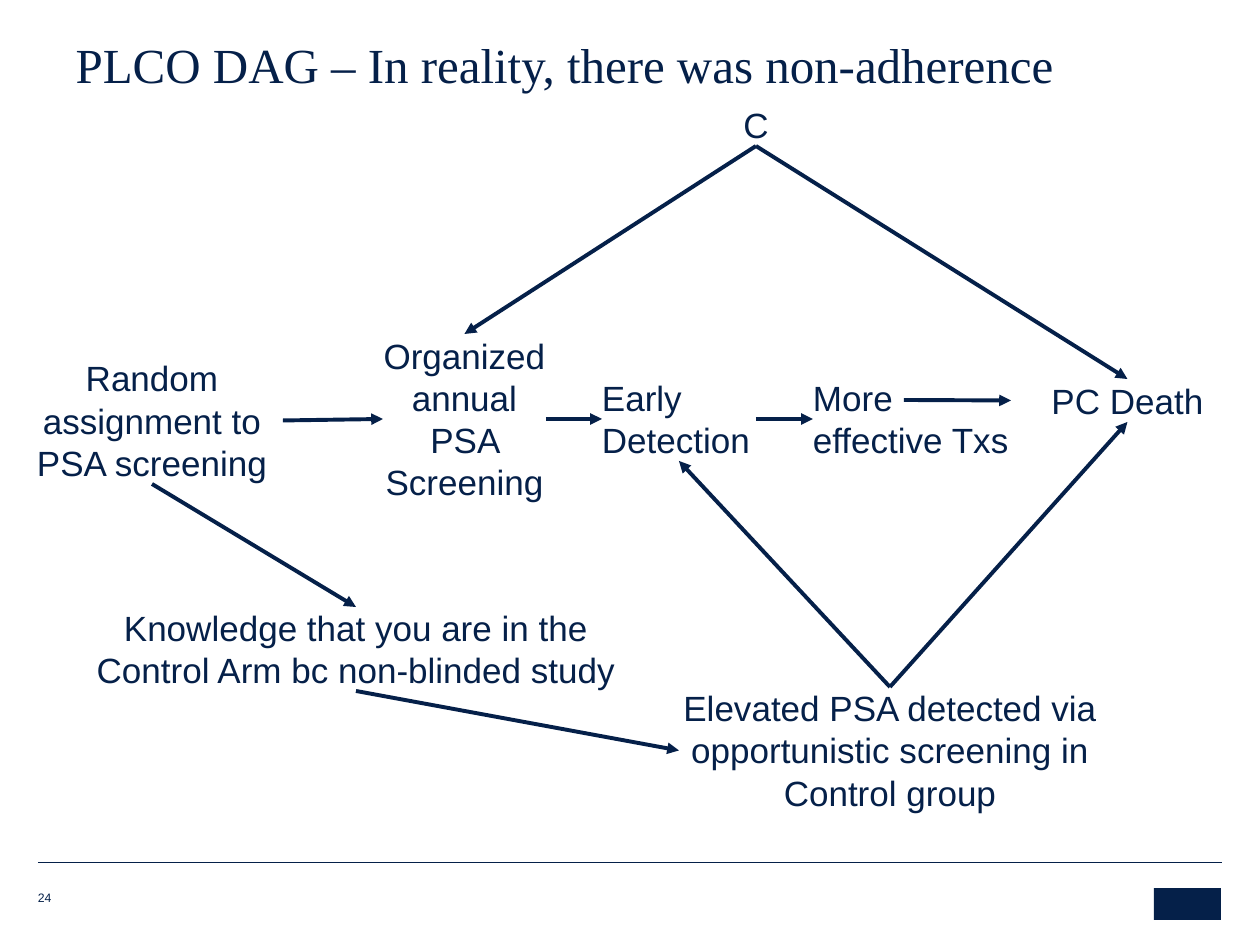
from lxml.etree import SubElement
from pptx import Presentation
from pptx.dml.color import RGBColor
from pptx.enum.shapes import MSO_CONNECTOR, MSO_SHAPE
from pptx.enum.text import MSO_ANCHOR, MSO_AUTO_SIZE, PP_ALIGN
from pptx.oxml.ns import qn
from pptx.util import Emu, Pt

PX = 914400 // 126
HUES = {"navy": "052049"}
TOP, LEFT, BOTTOM, RIGHT = range(4)
MID, START = PP_ALIGN.CENTER, PP_ALIGN.LEFT

TITLE = "PLCO DAG – In reality, there was non-adherence"

# Nodes: name -> text, box in px, alignment
NODES = {
    "random": ("Random assignment to PSA screening", (21, 357, 262, 127), MID),
    "annual": ("Organized annual PSA Screening", (383, 334, 163, 170), MID),
    "early": ("Early Detection", (602, 377, 154, 84), START),
    "more": ("More effective Txs", (813, 377, 205, 84), START),
    "death": ("PC Death", (1011, 379, 233, 43), MID),
    "cause": ("C", (630, 103, 252, 43), MID),
    "known": ("Knowledge that you are in the Control Arm bc non-blinded study",
              (72, 607, 568, 84), MID),
    "raised": ("Elevated PSA detected via opportunistic screening in Control group",
               (679, 687, 422, 127), MID),
}

# Arrows: from node, side, to node, side
LINKS = [
    ("random", RIGHT, "annual", LEFT),
    ("annual", RIGHT, "early", LEFT),
    ("early", RIGHT, "more", LEFT),
    ("cause", BOTTOM, "annual", TOP),
    ("cause", BOTTOM, "death", TOP),
    ("random", BOTTOM, "known", TOP),
    ("known", BOTTOM, "raised", LEFT),
    ("raised", TOP, "early", BOTTOM),
    ("raised", TOP, "death", BOTTOM),
]


def px(*nums):
    return [Emu(n * PX) for n in nums]


def hue(name):
    return RGBColor.from_string(HUES[name])


def style(para, size, face="Arial", align=START):
    para.alignment = align
    para.font.size = Pt(size)
    para.font.name = face
    para.font.color.rgb = hue("navy")


def label(slide, text, box, size, align=START):
    shape = slide.shapes.add_textbox(*px(*box))
    frame = shape.text_frame
    frame.word_wrap = True
    frame.margin_left = frame.margin_right = 0
    frame.margin_top = frame.margin_bottom = 0
    frame.text = text
    style(frame.paragraphs[0], size, align=align)
    return shape


def line(slide, ends=(0, 0, 0, 0), width=2.25, head=True):
    link = slide.shapes.add_connector(MSO_CONNECTOR.STRAIGHT, *px(*ends))
    link.line.color.rgb = hue("navy")
    link.line.width = Pt(width)
    if head:
        SubElement(link.line._get_or_add_ln(), qn("a:tailEnd"), type="triangle")
    SubElement(link._element.spPr, qn("a:effectLst"))
    return link


def main():
    deck = Presentation()
    deck.slide_width, deck.slide_height = px(1260, 945)
    slide = deck.slides.add_slide(deck.slide_layouts[5])

    # Title
    title = slide.shapes.title
    title.left, title.top, title.width, title.height = px(63, 16, 1126, 84)
    frame = title.text_frame
    frame.text = TITLE
    frame.auto_size = MSO_AUTO_SIZE.NONE
    frame.vertical_anchor = MSO_ANCHOR.BOTTOM
    style(frame.paragraphs[0], 28, "Times New Roman")
    frame.paragraphs[0].line_spacing = 0.85

    # Footer: rule, page number, plain block for the logo
    line(slide, (38, 862, 1222, 862), 0.25, head=False)
    label(slide, "24", (38, 890, 34, 21), 7)
    mark = slide.shapes.add_shape(MSO_SHAPE.RECTANGLE, *px(1154, 888, 67, 32))
    mark.shadow.inherit = False
    mark.fill.solid()
    mark.fill.fore_color.rgb = hue("navy")
    mark.line.fill.background()

    # Nodes
    nodes = {name: label(slide, text, box, 20, align)
             for name, (text, box, align) in NODES.items()}

    # Arrows
    for start, exit, end, entry in LINKS:
        link = line(slide)
        link.begin_connect(nodes[start], exit)
        link.end_connect(nodes[end], entry)
    last = line(slide, (904, 400, 1011, 400))
    last.end_connect(nodes["death"], LEFT)

    deck.save("out.pptx")


if __name__ == "__main__":
    main()
